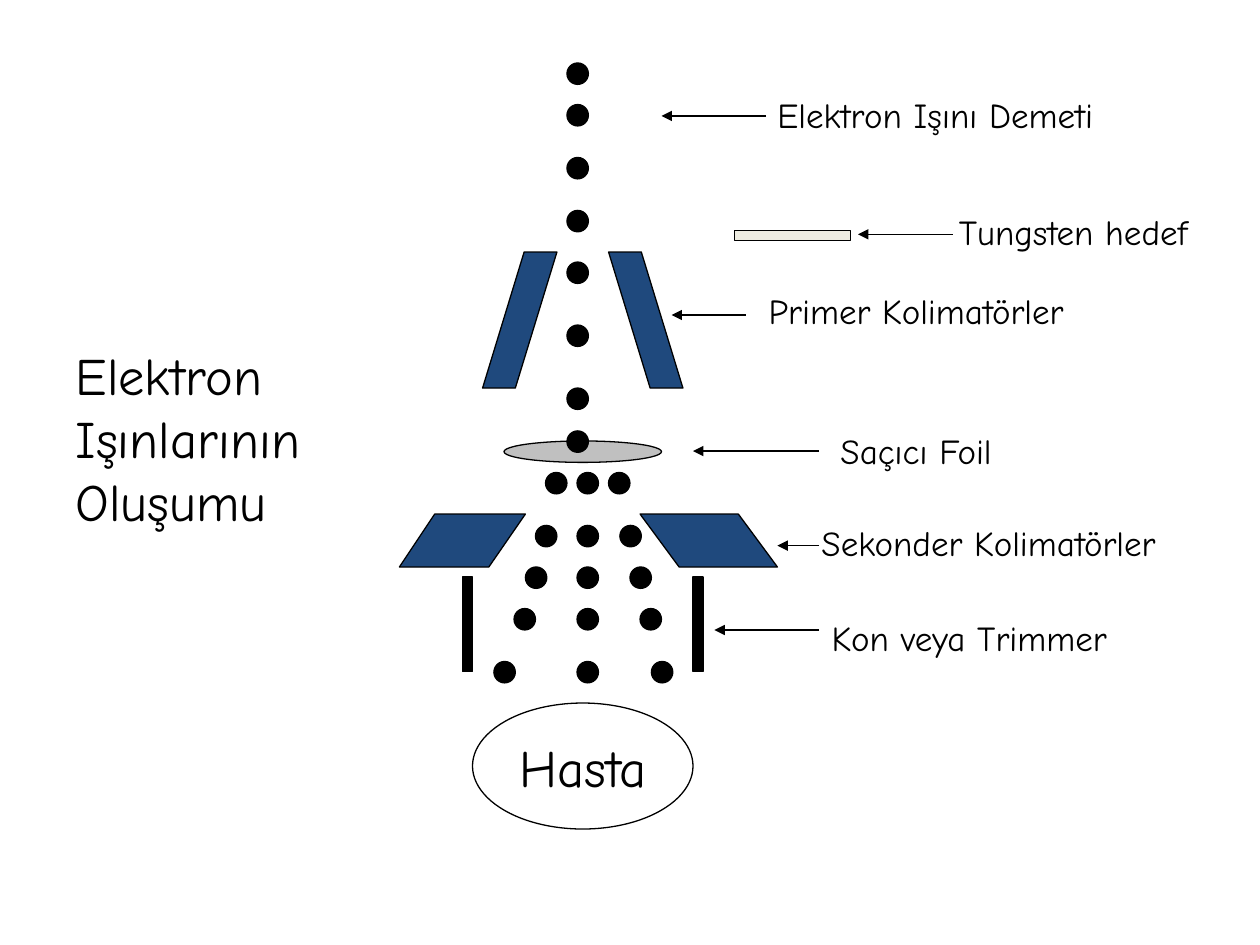
from typing import NamedTuple

from lxml import etree
from pptx import Presentation
from pptx.dml.color import RGBColor
from pptx.enum import shapes, text
from pptx.oxml import ns
from pptx.util import Inches, Pt

COLORS = {"ink": "000000", "collimator": "1F497D", "target": "EEECE1", "foil": "C0C0C0"}
FONT = "Comic Neue"
DOT = 0.17
OVAL, RECT = shapes.MSO_SHAPE.OVAL, shapes.MSO_SHAPE.RECTANGLE


class Label(NamedTuple):
    words: str
    left: float
    top: float
    width: float
    arrow_start: float
    arrow_end: float
    arrow_y: float


LABELS = [
    Label("Elektron Işını Demeti", 6.12, 0.69, 2.9, 6.08, 5.25, 0.92),
    Label("Tungsten hedef", 7.56, 1.62, 2.39, 7.56, 6.81, 1.86),
    Label("Primer Kolimatörler", 6.05, 2.25, 2.65, 5.92, 5.33, 2.5),
    Label("Saçıcı Foil", 6.62, 3.36, 1.52, 6.5, 5.5, 3.58),
    Label("Sekonder Kolimatörler", 6.47, 4.09, 3.03, 6.5, 6.17, 4.33),
    Label("Kon veya Trimmer", 6.55, 4.84, 2.43, 6.5, 5.67, 5),
]

# Corner points of the primary and secondary collimators
COLLIMATORS = [
    [(4.16, 2), (3.83, 3.08), (4.09, 3.08), (4.42, 2)],
    [(5.09, 2), (5.42, 3.08), (5.16, 3.08), (4.83, 2)],
    [(3.45, 4.08), (3.17, 4.5), (3.88, 4.5), (4.17, 4.08)],
    [(5.86, 4.08), (6.17, 4.5), (5.39, 4.5), (5.08, 4.08)],
]

# Electrons: a narrow beam above the foil, rows of three below it
BEAM_X, BEAM_TOPS = 4.5, [0.5, 0.83, 1.25, 1.67, 2.08, 2.58, 3.08, 3.42]
SCATTERED = {
    3.75: (4.33, 4.58, 4.83),
    4.17: (4.25, 4.58, 4.92),
    4.5: (4.17, 4.58, 5),
    4.83: (4.08, 4.58, 5.08),
    5.25: (3.92, 4.58, 5.17),
}


def color(name: str) -> RGBColor:
    return RGBColor.from_string(COLORS[name])


def paint(shape, fill: str | None) -> None:
    shape.shadow.inherit = False
    if fill:
        shape.fill.solid()
        shape.fill.fore_color.rgb = color(fill)
    else:
        shape.fill.background()
    shape.line.color.rgb = color("ink")
    shape.line.width = Pt(0.75)


def add_part(page, kind, left: float, top: float, width: float, height: float,
             fill: str | None = "ink") -> None:
    paint(page.shapes.add_shape(kind, *map(Inches, (left, top, width, height))), fill)


def add_polygon(page, points: list[tuple[float, float]], fill: str) -> None:
    first, *others = [(Inches(x), Inches(y)) for x, y in points]
    builder = page.shapes.build_freeform(*first)
    builder.add_line_segments(others, close=True)
    paint(builder.convert_to_shape(), fill)


def add_arrow(page, start: float, end: float, y: float) -> None:
    arrow = page.shapes.add_connector(
        shapes.MSO_CONNECTOR.STRAIGHT, *map(Inches, (start, y, end, y)))
    arrow.line.color.rgb = color("ink")
    arrow.line.width = Pt(0.75)
    etree.SubElement(arrow.line._get_or_add_ln(), ns.qn("a:tailEnd"), type="triangle")
    etree.SubElement(arrow._element.spPr, ns.qn("a:effectLst"))


def write(box, lines: list[str], size: int, align=text.PP_ALIGN.LEFT,
          anchor=text.MSO_ANCHOR.TOP) -> None:
    frame = box.text_frame
    frame.text = "\n".join(lines)
    margins = {f"margin_{side}": Inches(0.05) for side in ("left", "top", "right", "bottom")}
    formats = {**margins, "word_wrap": False, "vertical_anchor": anchor,
               "auto_size": text.MSO_AUTO_SIZE.SHAPE_TO_FIT_TEXT}
    for name, value in formats.items():
        setattr(frame, name, value)
    for para in frame.paragraphs:
        para.alignment = align
        for span in para.runs:
            for name, value in {"name": FONT, "size": Pt(size)}.items():
                setattr(span.font, name, value)
            span.font.color.rgb = color("ink")


def add_label(page, label: Label) -> None:
    box = page.shapes.add_textbox(
        *map(Inches, (label.left, label.top, label.width, 0.49)))
    write(box, [label.words], 20)
    add_arrow(page, label.arrow_start, label.arrow_end, label.arrow_y)


def main() -> None:
    deck = Presentation()
    deck.slide_width, deck.slide_height = Inches(10), Inches(7.5)
    page = deck.slides.add_slide(deck.slide_layouts[5])

    # Title
    title = page.shapes.title
    place = {"left": 0.55, "top": 2.67, "width": 2.08, "height": 1.85}
    for name, value in place.items():
        setattr(title, name, Inches(value))
    write(title, ["Elektron", "Işınlarının", "Oluşumu"], 30)

    # Machine parts: target, foil, collimators and trimmers
    add_part(page, RECT, 5.83, 1.83, 0.92, 0.08, "target")
    add_part(page, OVAL, 4, 3.5, 1.25, 0.17, "foil")
    for points in COLLIMATORS:
        add_polygon(page, points, "collimator")
    for left in (3.67, 5.5):
        add_part(page, RECT, left, 4.58, 0.08, 0.75)

    # Electrons
    for top in BEAM_TOPS:
        add_part(page, OVAL, BEAM_X, top, DOT, DOT)
    for top, lefts in SCATTERED.items():
        for left in lefts:
            add_part(page, OVAL, left, top, DOT, DOT)

    # Patient
    add_part(page, OVAL, 3.75, 5.58, 1.75, 1, None)
    patient = page.shapes.add_textbox(*map(Inches, (4, 5.74, 1.26, 0.68)))
    write(patient, ["Hasta"], 30, text.PP_ALIGN.CENTER, text.MSO_ANCHOR.MIDDLE)

    # Labels with arrows
    for label in LABELS:
        add_label(page, label)

    deck.save("out.pptx")


if __name__ == "__main__":
    main()
